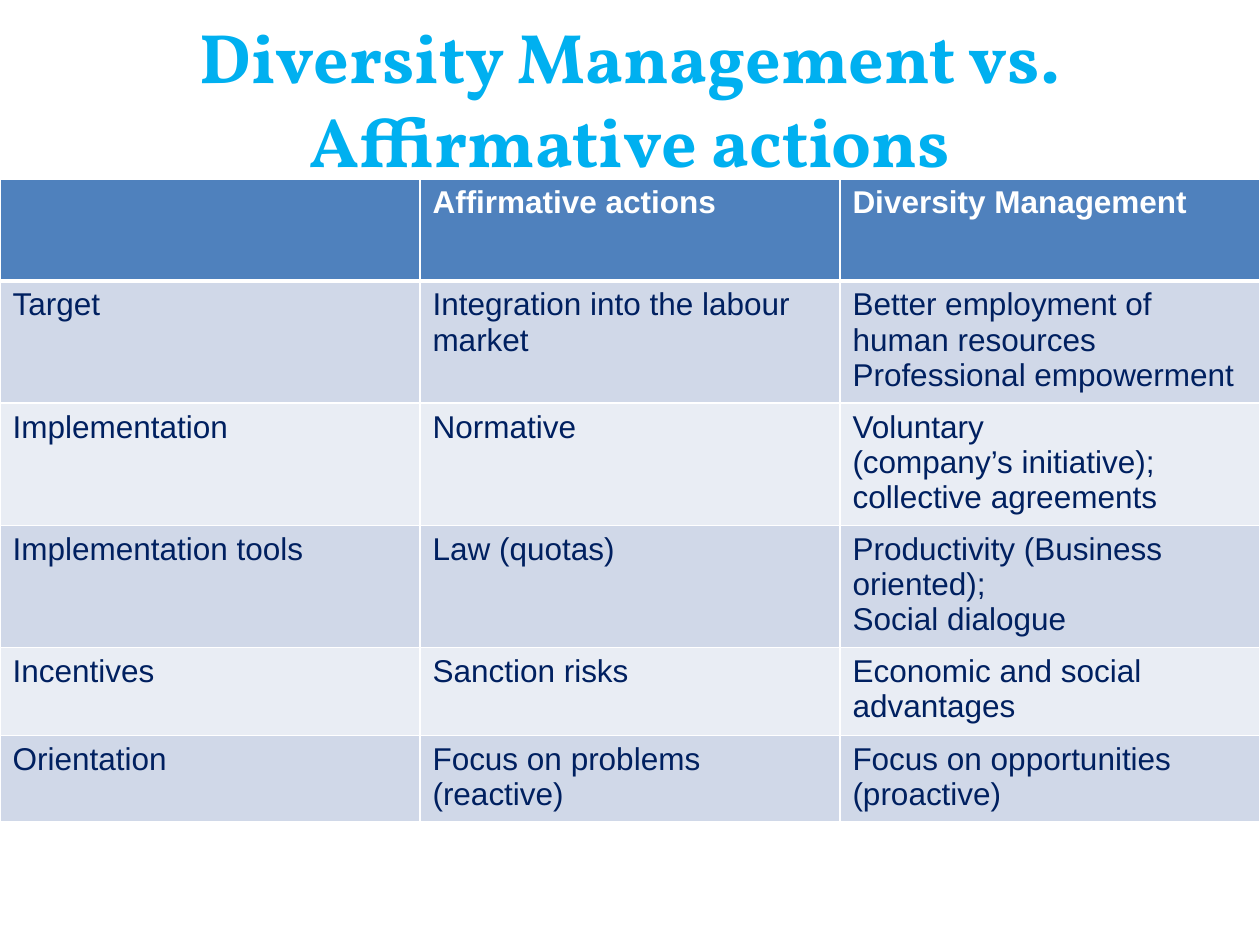
from dataclasses import dataclass

import pptx
import pptx.dml.color
import pptx.enum.text
import pptx.oxml
import pptx.oxml.ns
import pptx.util
from pptx.util import Inches


@dataclass(frozen=True)
class Theme:
    title_font: str = "Vollkorn"
    body_font: str = "Arial"
    title_size: int = 40
    body_size: int = 18
    title_color: str = "00B0F0"
    header_fill: str = "4F81BD"
    header_text: str = "FFFFFF"
    body_text: str = "002060"
    band_fills: tuple = ("D0D8E8", "E9EDF4")
    border_color: str = "FFFFFF"
    border_width: int = 1
    header_rule_width: int = 3


THEME = Theme()
TITLE = "Diversity Management vs. Affirmative actions"
ROWS = [
    ("", "Affirmative actions", "Diversity Management"),
    ("Target", "Integration into the labour market",
     "Better employment of human resources\nProfessional empowerment"),
    ("Implementation", "Normative",
     "Voluntary\n(company’s initiative); collective agreements"),
    ("Implementation tools", "Law (quotas)",
     "Productivity (Business oriented);\nSocial dialogue"),
    ("Incentives", "Sanction risks", "Economic and social advantages"),
    ("Orientation", "Focus on problems (reactive)",
     "Focus on opportunities (proactive)"),
]
ROW_HEIGHTS = (0.81, 0.97, 0.97, 0.97, 0.7, 0.68)


def rgb(color):
    return pptx.dml.color.RGBColor.from_string(color)


def style_font(font, name, size, color, bold):
    font.name = name
    font.size = pptx.util.Pt(size)
    font.color.rgb = rgb(color)
    font.bold = bold


def set_borders(cell, top, bottom):
    """Draw all four cell borders; top and bottom are widths in points."""
    properties = cell._tc.get_or_add_tcPr()
    side = THEME.border_width
    widths = (("lnL", side), ("lnR", side), ("lnT", top), ("lnB", bottom))
    for index, (tag, width) in enumerate(widths):
        properties.insert(index, pptx.oxml.parse_xml(
            f'<a:{tag} {pptx.oxml.ns.nsdecls("a")} w="{pptx.util.Pt(width)}">'
            f'<a:solidFill><a:srgbClr val="{THEME.border_color}"/></a:solidFill>'
            f'</a:{tag}>'))


def place_title(slide, left, top, width, height):
    title = slide.shapes.title
    title.left, title.top, title.width, title.height = left, top, width, height
    frame = title.text_frame
    frame.text = TITLE
    frame.word_wrap = True
    frame.auto_size = pptx.enum.text.MSO_AUTO_SIZE.NONE
    frame.vertical_anchor = pptx.enum.text.MSO_ANCHOR.MIDDLE
    paragraph = frame.paragraphs[0]
    paragraph.alignment = pptx.enum.text.PP_ALIGN.CENTER
    style_font(paragraph.runs[0].font, THEME.title_font, THEME.title_size,
               THEME.title_color, True)


def fill_cell(cell, text, row_index):
    is_header = row_index == 0
    fill = THEME.header_fill if is_header else THEME.band_fills[(row_index - 1) % 2]
    cell.fill.solid()
    cell.fill.fore_color.rgb = rgb(fill)
    set_borders(
        cell,
        top=THEME.header_rule_width if row_index == 1 else THEME.border_width,
        bottom=THEME.header_rule_width if is_header else THEME.border_width)
    cell.text_frame.text = text
    color = THEME.header_text if is_header else THEME.body_text
    for paragraph in cell.text_frame.paragraphs:
        for run in paragraph.runs:
            style_font(run.font, THEME.body_font, THEME.body_size, color, is_header)


def place_comparison_table(slide, left, top, width):
    column_count = len(ROWS[0])
    table = slide.shapes.add_table(
        len(ROWS), column_count, left, top, width, Inches(sum(ROW_HEIGHTS))).table
    for column in table.columns:
        column.width = width // column_count
    for row_index, (texts, height) in enumerate(zip(ROWS, ROW_HEIGHTS)):
        table.rows[row_index].height = Inches(height)
        for column_index, text in enumerate(texts):
            fill_cell(table.cell(row_index, column_index), text, row_index)


def main():
    presentation = pptx.Presentation()
    presentation.slide_width = Inches(10)
    presentation.slide_height = Inches(7.5)
    slide = presentation.slides.add_slide(
        presentation.slide_layouts.get_by_name("Title Only"))
    place_title(slide, Inches(0.5), Inches(0), Inches(9), Inches(1.55))
    place_comparison_table(slide, Inches(0), Inches(1.42), presentation.slide_width)
    presentation.save("out.pptx")


if __name__ == "__main__":
    main()
